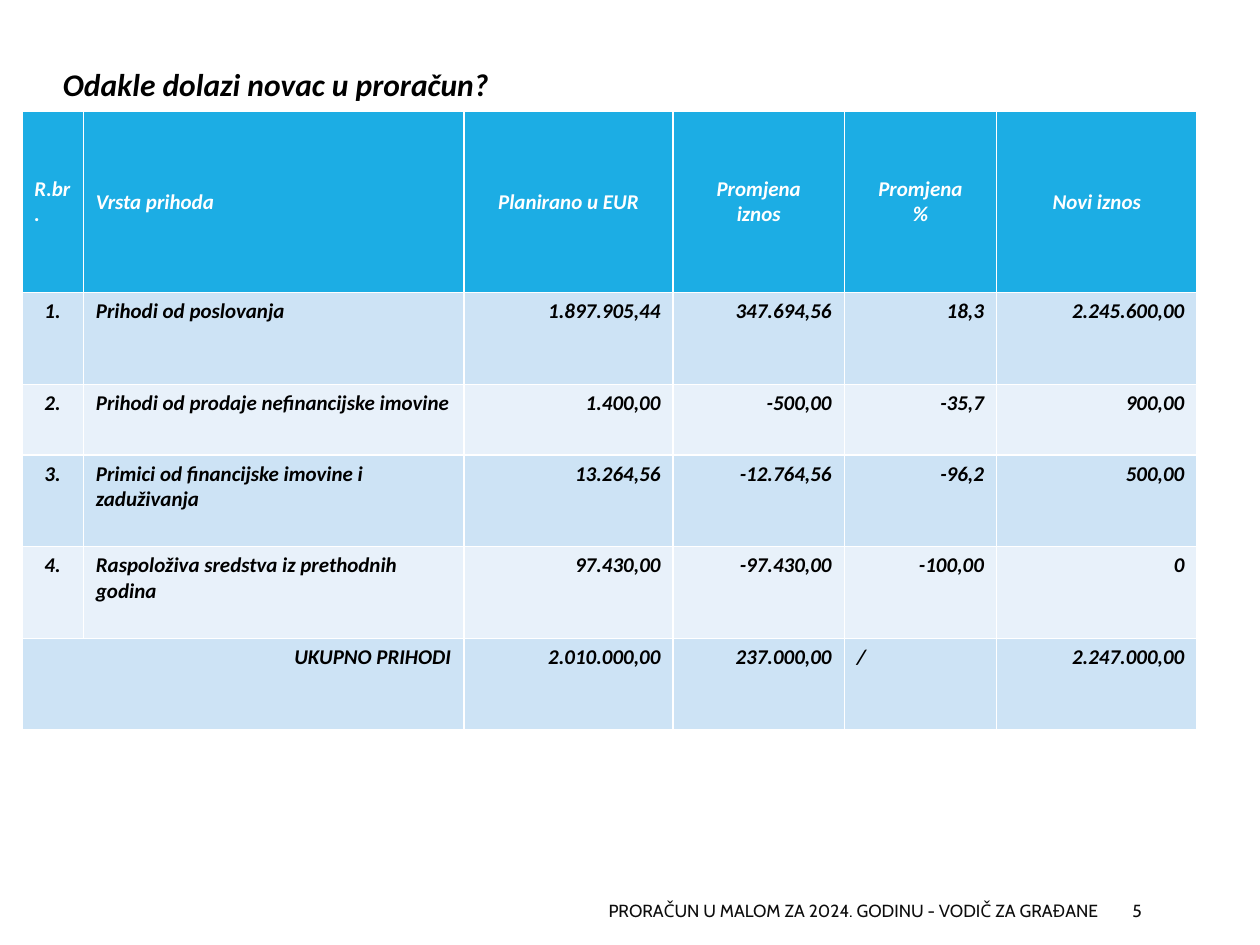
from dataclasses import dataclass

from pptx import Presentation
from pptx.dml.color import RGBColor
from pptx.enum import text as t
from pptx.util import Cm, Pt


@dataclass(frozen=True)
class Theme:
    body_font: str = "Calibri"
    footer_font: str = "Cabin"
    title_size: int = 18
    table_size: int = 12
    footer_size: int = 10
    ink: str = "000000"
    footer_ink: str = "0D0D0D"
    header_ink: str = "FFFFFF"
    header_fill: str = "1CADE4"
    bands: tuple = ("CDE3F5", "E8F1FA")


THEME = Theme()
LEFT, CENTER, RIGHT = t.PP_ALIGN.LEFT, t.PP_ALIGN.CENTER, t.PP_ALIGN.RIGHT
TOP, MIDDLE = t.MSO_ANCHOR.TOP, t.MSO_ANCHOR.MIDDLE

TITLE = "Odakle dolazi novac u proračun?"
FOOTER = "PRORAČUN U MALOM ZA 2024. GODINU - VODIČ ZA GRAĐANE"
PAGE_NUMBER = "5"

COLUMN_WIDTHS = [1.24, 7.67, 4.22, 3.45, 3.07, 4.04]
ROW_HEIGHTS = [3.66, 1.85, 1.42, 1.85, 1.85, 1.85]
HEADER_ALIGNS = [LEFT, LEFT, CENTER, CENTER, CENTER, CENTER]
BODY_ALIGNS = [CENTER, LEFT, RIGHT, RIGHT, RIGHT, RIGHT]
TOTAL_ALIGNS = [RIGHT, LEFT, RIGHT, RIGHT, LEFT, RIGHT]
REVENUES = [
    ["R.br.", "Vrsta prihoda", "Planirano u EUR", "Promjena\niznos", "Promjena\n%", "Novi iznos"],
    ["1.", "Prihodi od poslovanja", "1.897.905,44", "347.694,56", "18,3", "2.245.600,00"],
    ["2.", "Prihodi od prodaje nefinancijske imovine", "1.400,00", "-500,00", "-35,7", "900,00"],
    ["3.", "Primici od financijske imovine i zaduživanja", "13.264,56", "-12.764,56", "-96,2", "500,00"],
    ["4.", "Raspoloživa sredstva iz prethodnih godina", "97.430,00", "-97.430,00", "-100,00", "0"],
    ["UKUPNO PRIHODI", "", "2.010.000,00", "237.000,00", "/", "2.247.000,00"],
]


def write(frame, words, color, align=LEFT, **font_format):
    """Fill a text frame, one paragraph for each line of words."""
    frame.text = words
    for paragraph in frame.paragraphs:
        paragraph.alignment = align
        for run in paragraph.runs:
            run.font.color.rgb = RGBColor.from_string(color)
            for attribute, value in font_format.items():
                setattr(run.font, attribute, value)


def add_label(slide, box, words, color, anchor=TOP, align=LEFT, **font_format):
    frame = slide.shapes.add_textbox(*map(Cm, box)).text_frame
    frame.word_wrap = True
    frame.vertical_anchor = anchor
    write(frame, words, color, align, **font_format)


def add_title(slide, box):
    add_label(slide, box, TITLE, THEME.ink, name=THEME.body_font,
              size=Pt(THEME.title_size), bold=True, italic=True)


def add_revenue_table(slide, left, top):
    box = (left, top, sum(COLUMN_WIDTHS), sum(ROW_HEIGHTS))
    table = slide.shapes.add_table(
        len(ROW_HEIGHTS), len(COLUMN_WIDTHS), *map(Cm, box)).table
    for column, width in zip(table.columns, COLUMN_WIDTHS):
        column.width = Cm(width)
    for row, height in zip(table.rows, ROW_HEIGHTS):
        row.height = Cm(height)

    # The total label spans the number and name columns
    last = len(REVENUES) - 1
    table.cell(last, 0).merge(table.cell(last, 1))

    row_aligns = {0: HEADER_ALIGNS, last: TOTAL_ALIGNS}
    for r, entries in enumerate(REVENUES):
        is_header = r == 0
        fill = THEME.header_fill if is_header else THEME.bands[(r - 1) % 2]
        ink = THEME.header_ink if is_header else THEME.ink
        aligns = row_aligns.get(r, BODY_ALIGNS)
        for c, (words, align) in enumerate(zip(entries, aligns)):
            cell = table.cell(r, c)
            cell.fill.solid()
            cell.fill.fore_color.rgb = RGBColor.from_string(fill)
            cell.vertical_anchor = MIDDLE if is_header else TOP
            if not cell.is_spanned:
                write(cell.text_frame, words, ink, align, name=THEME.body_font,
                      size=Pt(THEME.table_size), bold=True, italic=True)


def add_footer(slide, left, top, width, height):
    number_width, gap = 2.03, 0.2
    words_width = width - number_width - gap
    footer_format = {"name": THEME.footer_font, "size": Pt(THEME.footer_size)}
    add_label(slide, (left, top, words_width, height), FOOTER,
              THEME.footer_ink, MIDDLE, RIGHT, **footer_format)
    add_label(slide, (left + words_width + gap, top, number_width, height),
              PAGE_NUMBER, THEME.footer_ink, MIDDLE, **footer_format)


def main():
    deck = Presentation()
    deck.slide_width, deck.slide_height = Cm(25.4), Cm(19.05)
    slide = deck.slides.add_slide(deck.slide_layouts[6])
    add_footer(slide, 10.08, 17.98, 14.53, 0.76)
    add_revenue_table(slide, 0.44, 2.24)
    add_title(slide, (1.02, 1.19, 11, 1.02))
    deck.save("out.pptx")


if __name__ == "__main__":
    main()
